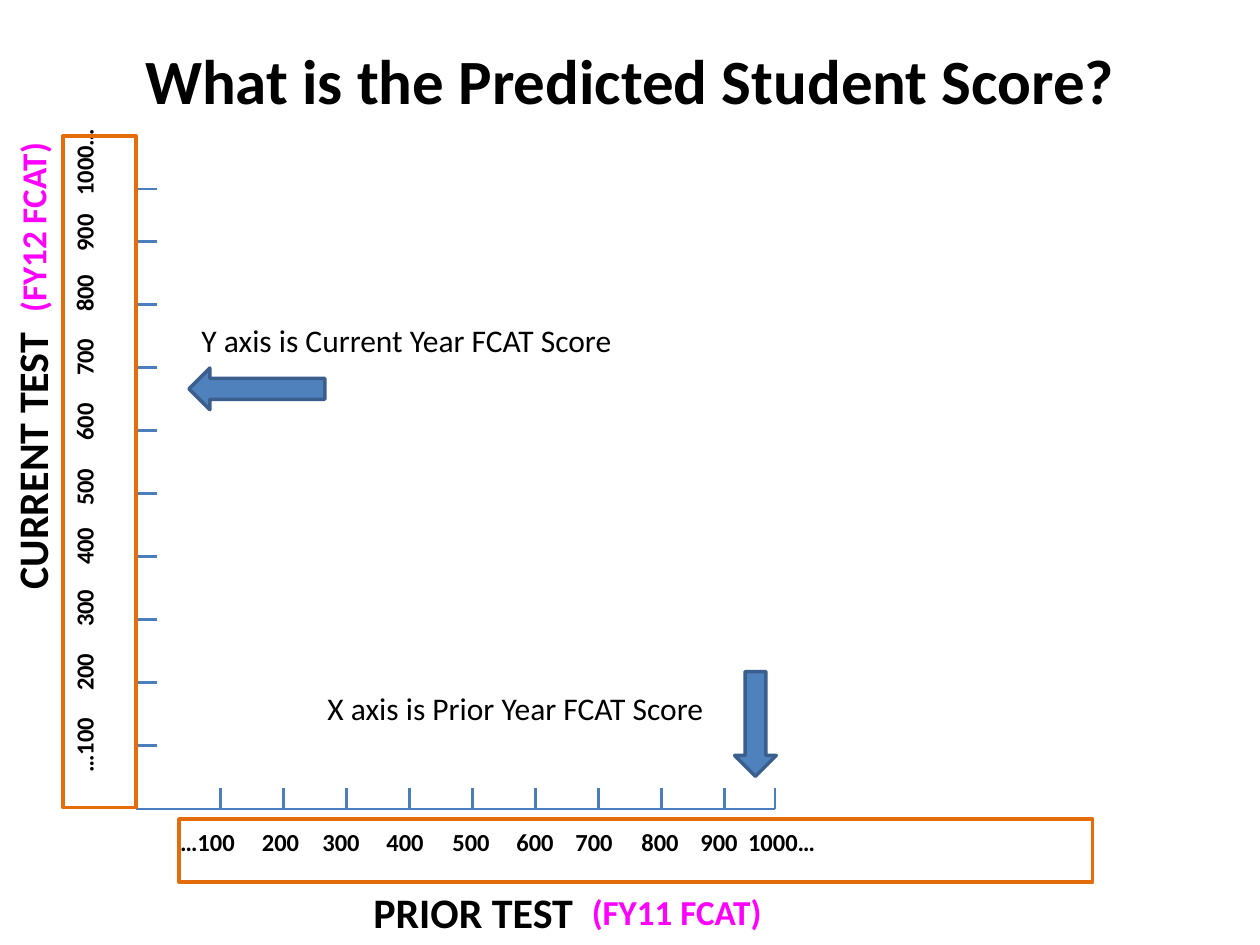
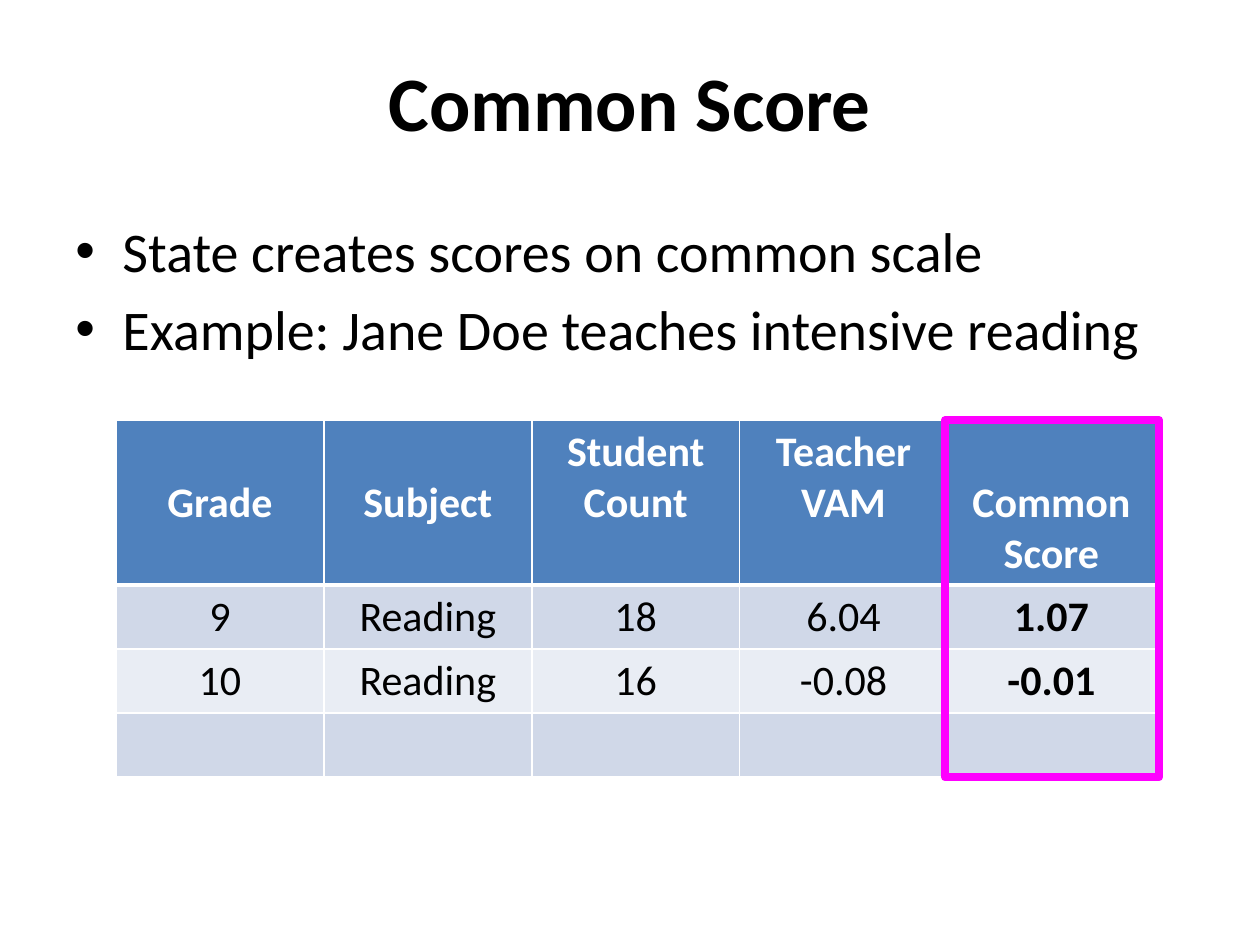
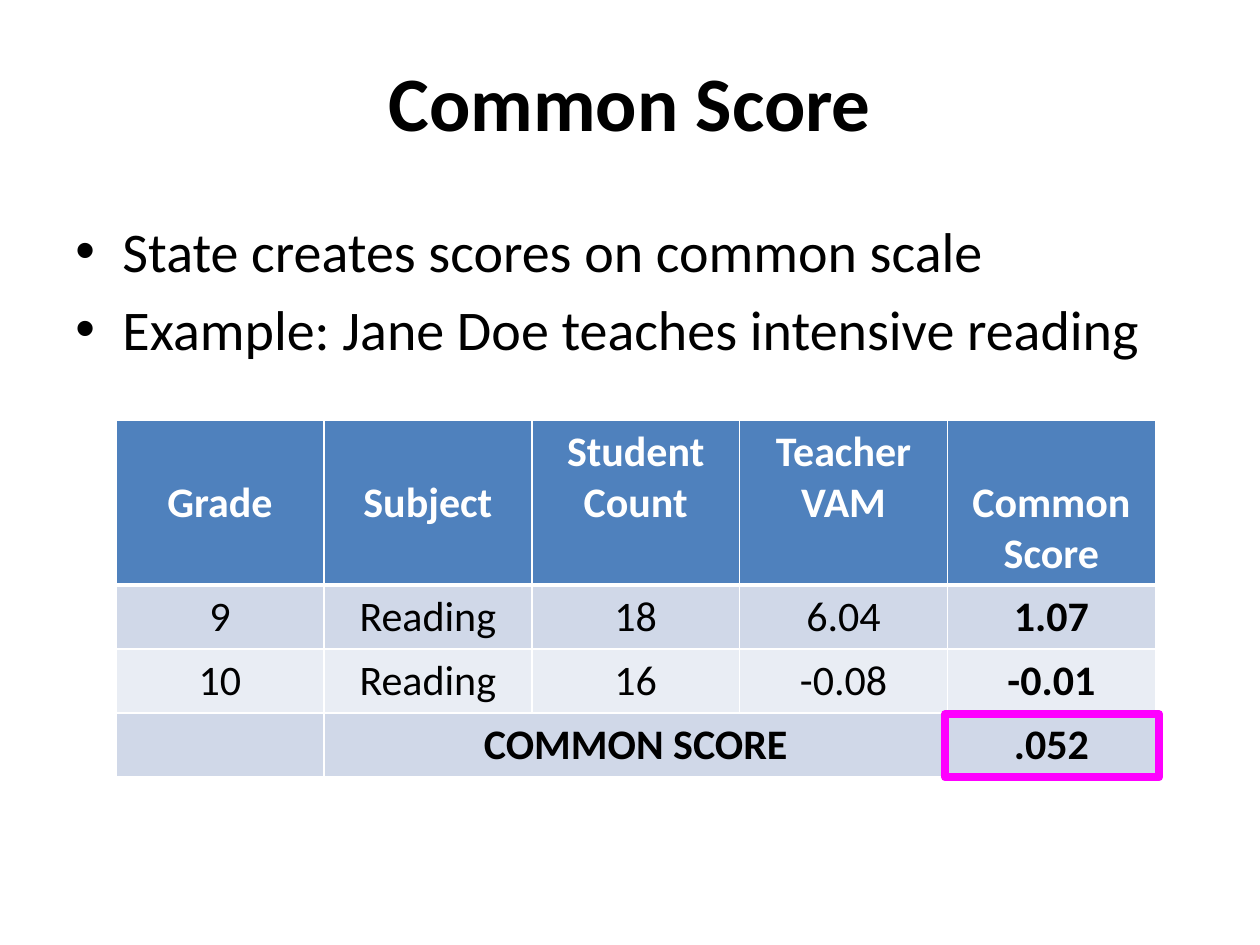
from lxml.etree import SubElement
from pptx import Presentation
from pptx.dml.color import RGBColor
from pptx.enum.shapes import MSO_CONNECTOR, MSO_SHAPE
from pptx.enum.text import MSO_ANCHOR, PP_ALIGN
from pptx.oxml.ns import qn
from pptx.util import Cm, Pt

FONT = "Calibri"
COLORS = {
    "text": "000000", "white": "FFFFFF", "axis": "4B7EBC", "blue": "4F81BD",
    "arrow_edge": "3A5F8C", "frame": "E46C0A", "accent": "FF00FF",
    "band_dark": "D0D8E8", "band_light": "E9EDF4",
}

# Content: score chart (lengths in cm)
SCORES = ["…100", "200", "300", "400", "500", "600", "700", "800", "900", "1000…"]
PRIOR_STOPS = [0.56, 2.21, 3.43, 4.72, 6.05, 7.34, 8.53, 9.86, 11.05, 12.01]
CURRENT_STOPS = [0.84, 2.49, 3.78, 5.03, 6.22, 7.54, 8.84, 10.13, 11.35, 12.47]
ORIGIN_X, ORIGIN_Y = 2.74, 16.31
AXIS_TOP, AXIS_RIGHT = 3.81, 15.62
TICK, TICK_GAP, TICK_COUNT = 0.43, 1.27, 9
FIRST_PRIOR_TICK, FIRST_CURRENT_TICK = 4.45, 4.87

CHART_TEXTS = [
    # text, box, size, colour, bold, centred, wrapped, vertical, rotation
    ("CURRENT TEST", (0, 6.22, 1.55, 6.15), 24, "text", True, True, True, True, 0),
    ("PRIOR TEST", (3.61, 17.75, 11.86, 1.3), 24, "text", True, True, True, False, 0),
    ("(FY11 FCAT)", (11.68, 17.83, 3.96, 1.12), 20, "accent", True, False, False, False, 0),
    ("(FY12 FCAT)", (-2.08, 3.25, 5.49, 1.12), 20, "accent", True, False, True, False, 270),
    ("X axis is Prior Year FCAT Score", (6.35, 13.77, 8.18, 1.02), 18, "text",
     False, False, False, False, 0),
    ("Y axis is Current Year FCAT Score", (3.81, 6.35, 8.86, 1.02), 18, "text",
     False, False, False, False, 0),
]
AXIS_FRAMES = [(3.61, 16.51, 18.42, 1.27), (1.27, 2.74, 1.47, 13.54)]
POINTERS = [
    (MSO_SHAPE.DOWN_ARROW, (14.81, 13.54, 0.84, 2.11)),
    (MSO_SHAPE.LEFT_ARROW, (3.81, 7.42, 2.74, 0.84)),
]

# Content: common score slides
POINTS = [
    "State creates scores on common scale",
    "Example: Jane Doe teaches intensive reading",
]
HEADINGS = ["Grade", "Subject", "Student Count", "Teacher VAM", "Common Score"]
LOWERED_HEADINGS = {"Grade", "Subject", "Common Score"}
CLASSES = [
    ["9", "Reading", "18", "6.04", "1.07"],
    ["10", "Reading", "16", "-0.08", "-0.01"],
]
COMMON_SCORE_SLIDES = [
    # last table row, highlighted box
    (["", "", "", "", ""], (19.05, 8.47, 4.32, 7.2)),
    (["", "COMMON SCORE", "", "", ".052"], (19.05, 14.4, 4.32, 1.27)),
]
TABLE_LEFT, TABLE_TOP, COLUMN_WIDTH = 2.34, 8.47, 4.19
ROW_HEIGHTS = [3.32, 1.29, 1.29, 1.29]
LINE_HEIGHT = 1.03


def rgb(name):
    return RGBColor.from_string(COLORS[name])


def cm(box):
    return [Cm(length) for length in box]


def style(paragraph, size, color="text", bold=False, align=PP_ALIGN.LEFT):
    paragraph.alignment = align
    for run in paragraph.runs:
        run.font.name = FONT
        run.font.size = Pt(size)
        run.font.bold = bold
        run.font.color.rgb = rgb(color)


def make_vertical(shape):
    shape.element.xpath(".//a:bodyPr")[0].set("vert", "vert270")


def add_titled_slide(prs, title, box, size):
    slide = prs.slides.add_slide(prs.slide_layouts[5])
    heading = slide.shapes.title
    heading.left, heading.top, heading.width, heading.height = cm(box)
    heading.text_frame.text = title
    heading.text_frame.vertical_anchor = MSO_ANCHOR.MIDDLE
    style(heading.text_frame.paragraphs[0], size, bold=True, align=PP_ALIGN.CENTER)
    return slide


def add_line(slide, x1, y1, x2, y2):
    line = slide.shapes.add_connector(MSO_CONNECTOR.STRAIGHT, *cm((x1, y1, x2, y2)))
    line.line.color.rgb = rgb("axis")
    line.line.width = Pt(1.5)
    SubElement(line.element.spPr, qn("a:effectLst"))


def add_box(slide, kind, box, fill=None, edge=None, width=2):
    shape = slide.shapes.add_shape(kind, *cm(box))
    shape.shadow.inherit = False
    if fill:
        shape.fill.solid()
        shape.fill.fore_color.rgb = rgb(fill)
    else:
        shape.fill.background()
    if edge:
        shape.line.color.rgb = rgb(edge)
        shape.line.width = Pt(width)
    else:
        shape.line.fill.background()
    return shape


def add_scale(slide, box, stops):
    """One line of score labels, each starting at its own tab stop."""
    scale = add_box(slide, MSO_SHAPE.RECTANGLE, box, fill="white")
    frame = scale.text_frame
    frame.vertical_anchor = MSO_ANCHOR.TOP
    labels = frame.paragraphs[0]
    labels.text = "".join("\t" + score for score in SCORES)
    style(labels, 14, bold=True)
    tabs = SubElement(labels._p.get_or_add_pPr(), qn("a:tabLst"))
    for stop in stops:
        SubElement(tabs, qn("a:tab"), pos=str(Cm(stop)), algn="l")
    return scale


def build_score_chart(prs):
    slide = add_titled_slide(prs, "What is the Predicted Student Score?",
                             (0, 0, 25.4, 3.18), 36)
    # Axes and ticks
    add_line(slide, ORIGIN_X, AXIS_TOP, ORIGIN_X, ORIGIN_Y)
    add_line(slide, ORIGIN_X, ORIGIN_Y, AXIS_RIGHT, ORIGIN_Y)
    steps = [i * TICK_GAP for i in range(TICK_COUNT)]
    for y in [AXIS_TOP] + [FIRST_CURRENT_TICK + step for step in steps]:
        add_line(slide, ORIGIN_X, y, ORIGIN_X + TICK, y)
    for x in [FIRST_PRIOR_TICK + step for step in steps] + [AXIS_RIGHT]:
        add_line(slide, x, ORIGIN_Y - TICK, x, ORIGIN_Y)
    # Score labels
    add_scale(slide, (2.82, 16.54, 15.04, 0.86), PRIOR_STOPS)
    make_vertical(add_scale(slide, (1.27, 2.34, 1.12, 14.33), CURRENT_STOPS))
    # Axis names and explanations
    for text, box, size, color, bold, centred, wrapped, vertical, rotation in CHART_TEXTS:
        label = slide.shapes.add_textbox(*cm(box))
        label.rotation = rotation
        label.text_frame.word_wrap = wrapped
        label.text_frame.text = text
        style(label.text_frame.paragraphs[0], size, color, bold,
              PP_ALIGN.CENTER if centred else PP_ALIGN.LEFT)
        if vertical:
            make_vertical(label)
    # Frames and pointers
    for box in AXIS_FRAMES:
        add_box(slide, MSO_SHAPE.RECTANGLE, box, edge="frame")
    for kind, box in POINTERS:
        add_box(slide, kind, box, fill="blue", edge="arrow_edge")


def add_points(slide):
    body = slide.shapes.add_textbox(*cm((1.27, 4.24, 22.86, 4.1)))
    body.text_frame.word_wrap = True
    body.text_frame.text = "\n".join(POINTS)
    for point in body.text_frame.paragraphs:
        style(point, 32)
        point.space_before = Pt(6.4)
        properties = point._p.get_or_add_pPr()
        properties.set("marL", str(Cm(0.95)))
        properties.set("indent", str(-Cm(0.95)))
        SubElement(properties, qn("a:buFont"), typeface="Arial")
        SubElement(properties, qn("a:buChar"), char="•")


def add_borders(cell, top, bottom):
    properties = cell._tc.get_or_add_tcPr()
    for side, width in (("L", 1), ("R", 1), ("T", top), ("B", bottom)):
        border = SubElement(properties, qn("a:ln" + side), w=str(Pt(width)))
        fill = SubElement(border, qn("a:solidFill"))
        SubElement(fill, qn("a:srgbClr"), val=COLORS["white"])


def add_score_table(slide, last_row):
    rows = [HEADINGS] + CLASSES + [last_row]
    table = slide.shapes.add_table(
        len(rows), len(HEADINGS),
        *cm((TABLE_LEFT, TABLE_TOP, COLUMN_WIDTH * len(HEADINGS), sum(ROW_HEIGHTS)))).table
    for column in table.columns:
        column.width = Cm(COLUMN_WIDTH)
    for r, values in enumerate(rows):
        table.rows[r].height = Cm(ROW_HEIGHTS[r])
        is_heading, is_last = r == 0, r == len(rows) - 1
        band = "blue" if is_heading else "band_dark" if r % 2 else "band_light"
        for c, value in enumerate(values):
            cell = table.cell(r, c)
            add_borders(cell, 3 if r == 1 else 1, 3 if is_heading else 1)
            cell.fill.solid()
            cell.fill.fore_color.rgb = rgb(band)
            if is_heading and value in LOWERED_HEADINGS:
                cell.margin_top = Cm(0.13 + LINE_HEIGHT)
            if value:
                cell.text_frame.text = value
                style(cell.text_frame.paragraphs[0], 24,
                      "white" if is_heading else "text",
                      is_heading or is_last or c == len(values) - 1, PP_ALIGN.CENTER)
    if any(last_row):
        table.cell(len(rows) - 1, 1).merge(table.cell(len(rows) - 1, 3))


def build_common_score(prs, last_row, highlight):
    slide = add_titled_slide(prs, "Common Score", (1.27, 0.43, 22.86, 3.18), 44)
    add_points(slide)
    add_score_table(slide, last_row)
    add_box(slide, MSO_SHAPE.RECTANGLE, highlight, edge="accent", width=4.5)


def main():
    prs = Presentation()
    prs.slide_width, prs.slide_height = Cm(25.4), Cm(19.05)
    build_score_chart(prs)
    for last_row, highlight in COMMON_SCORE_SLIDES:
        build_common_score(prs, last_row, highlight)
    prs.save("out.pptx")


if __name__ == "__main__":
    main()
